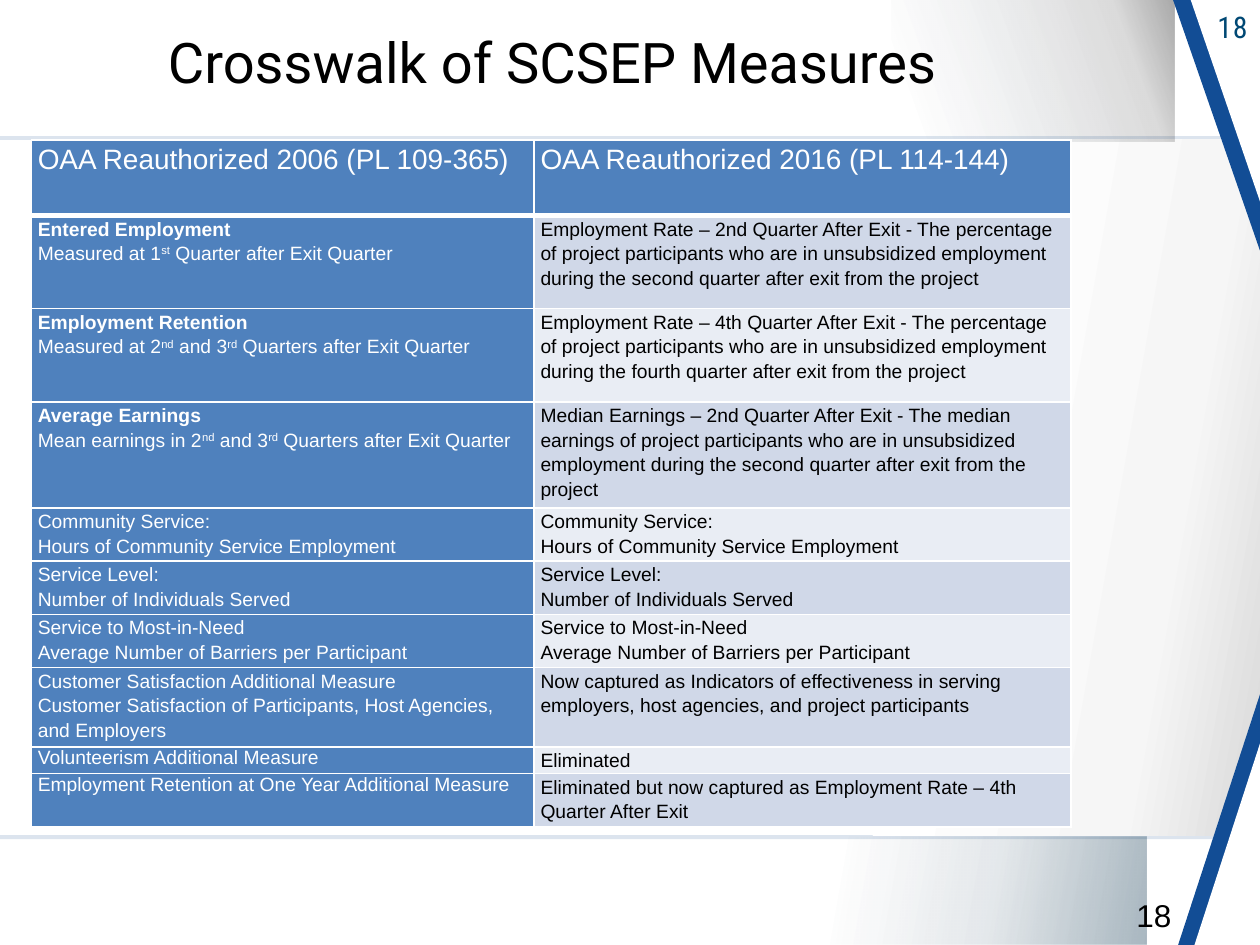
from dataclasses import dataclass

from lxml import etree
from pptx import Presentation
from pptx.dml.color import RGBColor
from pptx.enum.shapes import MSO_SHAPE
from pptx.enum.text import MSO_ANCHOR, PP_ALIGN
from pptx.oxml.ns import qn
from pptx.util import Inches, Pt

RECTANGLE = MSO_SHAPE.RECTANGLE
TRIANGLE = MSO_SHAPE.ISOSCELES_TRIANGLE
TOP = MSO_ANCHOR.TOP
LEFT, CENTER, RIGHT = PP_ALIGN.LEFT, PP_ALIGN.CENTER, PP_ALIGN.RIGHT


@dataclass(frozen=True)
class Theme:
    """Colours, fonts and type sizes of the slide."""
    white: str = "FFFFFF"
    black: str = "000000"
    stripe: str = "124D95"
    rule: str = "275A99"
    navy: str = "002C47"
    number: str = "004874"
    header: str = "4F81BD"
    bands: tuple = ("D0D8E8", "E9EDF4")
    body_font: str = "Arial"
    title_font: str = "Roboto"
    number_font: str = "Roboto Condensed"
    title_size: int = 32
    header_size: int = 16
    cell_size: int = 11
    corner_size: int = 17
    footer_size: int = 18


THEME = Theme()
HEADINGS = ("OAA Reauthorized 2006 (PL 109-365)", "OAA Reauthorized 2016 (PL 114-144)")
RATE = ("Employment Rate – {} Quarter After Exit - The percentage of project participants "
        "who are in unsubsidized employment during the {} quarter after exit from the project")
COMMUNITY = ["Community Service:", "Hours of Community Service Employment"]
SERVICE = ["Service Level:", "Number of Individuals Served"]
NEED = ["Service to Most-in-Need", "Average Number of Barriers per Participant"]
MEASURES = [
    (["Entered Employment", "Measured at 1^st^ Quarter after Exit Quarter"],
     [RATE.format("2nd", "second")]),
    (["Employment Retention", "Measured at 2^nd^ and 3^rd^ Quarters after Exit Quarter"],
     [RATE.format("4th", "fourth")]),
    (["Average Earnings", "Mean earnings in 2^nd^ and 3^rd^ Quarters after Exit Quarter"],
     ["Median Earnings – 2nd Quarter After Exit - The median earnings of project participants "
      "who are in unsubsidized employment during the second quarter after exit from the project"]),
    (COMMUNITY, COMMUNITY),
    (SERVICE, SERVICE),
    (NEED, NEED),
    (["Customer Satisfaction Additional Measure",
      "Customer Satisfaction of Participants, Host Agencies, and Employers"],
     ["Now captured as Indicators of effectiveness in serving employers, host agencies, "
      "and project participants"]),
    (["Volunteerism Additional Measure"], ["Eliminated"]),
    (["Employment Retention at One Year Additional Measure"],
     ["Eliminated but now captured as Employment Rate – 4th Quarter After Exit"]),
]
BOLD_LEADS = 3
SINGLE_SPACED = 2
COLUMN_WIDTHS = (3.99, 4.26)
ROW_HEIGHTS = (0.6, 0.74, 0.74, 0.84, 0.42, 0.42, 0.42, 0.63, 0.21, 0.42)


def add_span(para, text, font, size, color, bold=False):
    """Add one formatted run and return it."""
    span = para.add_run()
    span.text = text
    span.font.name, span.font.size, span.font.bold = font, Pt(size), bold
    span.font.color.rgb = RGBColor.from_string(color)
    return span


def set_alpha(color_element, percent):
    """Give a colour element an opacity."""
    etree.SubElement(color_element, qn("a:alpha")).set("val", str(percent * 1000))


def add_plain(page, kind, box, color):
    """Add a flat shape without line or shadow."""
    shape = page.shapes.add_shape(kind, *map(Inches, box))
    shape.shadow.inherit = False
    shape.line.fill.background()
    shape.fill.solid()
    shape.fill.fore_color.rgb = RGBColor.from_string(color)
    return shape


def add_gradient(page, box, stops, angle):
    """Add a rectangle whose stops are position, colour and opacity."""
    shape = add_plain(page, RECTANGLE, box, THEME.white)
    shape.fill.gradient()
    shape.fill.gradient_angle = (360 - angle) % 360
    stop_list = shape._element.spPr.find(qn("a:gradFill")).find(qn("a:gsLst"))
    for old in list(stop_list):
        stop_list.remove(old)
    for position, color, opacity in stops:
        stop = etree.SubElement(stop_list, qn("a:gs"), pos=str(position * 1000))
        set_alpha(etree.SubElement(stop, qn("a:srgbClr"), val=color), opacity)


def add_backdrop(page, box):
    """Place the ruled middle panel and the two shaded blocks."""
    left, top, width, height = box
    band = add_plain(page, RECTANGLE, box, THEME.rule)
    set_alpha(band._element.spPr.find(qn("a:solidFill"))[0], 16)
    add_gradient(page, (left, top + 0.03, width, height - 0.06),
                 [(0, THEME.white, 100), (72, THEME.white, 100),
                  (90, "F6F6F6", 100), (100, "D9D9D9", 100)], 10)
    add_gradient(page, (left + 6.43, 6.64, 2.67, 0.86),
                 [(10, THEME.navy, 0), (56, THEME.navy, 11), (100, THEME.navy, 34)], 10)
    add_gradient(page, (left + 7.08, 0, 2.24, 1.12),
                 [(10, THEME.navy, 0), (81, THEME.black, 14), (100, THEME.black, 34)], 340)


def add_corner(page, box, inner, flipped):
    """Place a blue corner triangle with a white one inside it."""
    left, top, width, height = box
    inner_width, inner_height = inner
    inner_top = top if flipped else top + height - inner_height
    inner_box = (left + width - inner_width, inner_top, inner_width, inner_height)
    for part, color in ((box, THEME.stripe), (inner_box, THEME.white)):
        shape = add_plain(page, TRIANGLE, part, color)
        shape.adjustments[0] = 1.0
        if flipped:
            shape._element.spPr.find(qn("a:xfrm")).set("flipV", "1")


def add_number(page, box, font, size, color, align, spacing):
    """Place a page number."""
    frame = page.shapes.add_textbox(*map(Inches, box)).text_frame
    frame.word_wrap = True
    para = frame.paragraphs[0]
    para.alignment = align
    span = add_span(para, "18", font, size, color)
    span._r.get_or_add_rPr().set("spc", str(spacing))


def add_title(page, box):
    """Move and format the title placeholder, above the backdrop."""
    title = page.shapes.title
    title.left, title.top, title.width, title.height = map(Inches, box)
    frame = title.text_frame
    frame.vertical_anchor = TOP
    para = frame.paragraphs[0]
    para.alignment = CENTER
    add_span(para, "Crosswalk of SCSEP Measures", THEME.title_font, THEME.title_size, THEME.black)
    page.shapes._spTree.append(title._element)


def fill_cell(cell, lines, fill, color, size, bold_lead=False, spacing=1.15, bottom=1):
    """Write, border and fill one cell; carets enclose superscripts."""
    cell.margin_left = cell.margin_right = Inches(0.05)
    cell.margin_top = cell.margin_bottom = 0
    properties = cell._tc.get_or_add_tcPr()
    for side, points in (("lnL", 1), ("lnR", 1), ("lnT", 1), ("lnB", bottom)):
        border = etree.SubElement(properties, qn("a:" + side), w=str(Pt(points)))
        solid = etree.SubElement(border, qn("a:solidFill"))
        etree.SubElement(solid, qn("a:srgbClr"), val=THEME.white)
    cell.fill.solid()
    cell.fill.fore_color.rgb = RGBColor.from_string(fill)
    frame = cell.text_frame
    for index, line in enumerate(lines):
        para = frame.add_paragraph() if index else frame.paragraphs[0]
        para.line_spacing = spacing
        for part, text in enumerate(line.split("^")):
            span = add_span(para, text, THEME.body_font, size, color, bold_lead and index == 0)
            if part % 2:
                span._r.get_or_add_rPr().set("baseline", "30000")


def add_measures(page, box):
    """Place the table that compares the two sets of measures."""
    table = page.shapes.add_table(len(ROW_HEIGHTS), len(COLUMN_WIDTHS), *map(Inches, box)).table
    for column, width in zip(table.columns, COLUMN_WIDTHS):
        column.width = Inches(width)
    for row, height in zip(table.rows, ROW_HEIGHTS):
        row.height = Inches(height)
    for column, heading in enumerate(HEADINGS):
        fill_cell(table.cell(0, column), [heading], THEME.header, THEME.white,
                  THEME.header_size, bottom=3)
    for index, (before, after) in enumerate(MEASURES):
        spacing = 1.0 if index >= len(MEASURES) - SINGLE_SPACED else 1.15
        fill_cell(table.cell(index + 1, 0), before, THEME.header, THEME.white,
                  THEME.cell_size, index < BOLD_LEADS, spacing)
        fill_cell(table.cell(index + 1, 1), after, THEME.bands[index % 2], THEME.black,
                  THEME.cell_size)


def main():
    """Build and save the deck."""
    deck = Presentation()
    deck.slide_width, deck.slide_height = Inches(10), Inches(7.5)
    page = deck.slides.add_slide(deck.slide_layouts[5])
    add_backdrop(page, (0, 1.08, 10, 5.58))
    add_corner(page, (9.31, 0, 0.69, 1.99), (0.55, 1.6), True)
    add_number(page, (9.2, 0.02, 0.8, 0.39), THEME.number_font, THEME.corner_size,
               THEME.number, RIGHT, 40)
    add_corner(page, (9.35, 5.51, 0.65, 1.99), (0.52, 1.6), False)
    add_measures(page, (0.25, 1.11, 8.25, 5.48))
    add_number(page, (8.92, 7.06, 1.08, 0.4), THEME.body_font, THEME.footer_size,
               THEME.black, LEFT, 0)
    add_title(page, (1.05, 0.17, 6.67, 0.94))
    deck.save("out.pptx")


if __name__ == "__main__":
    main()
